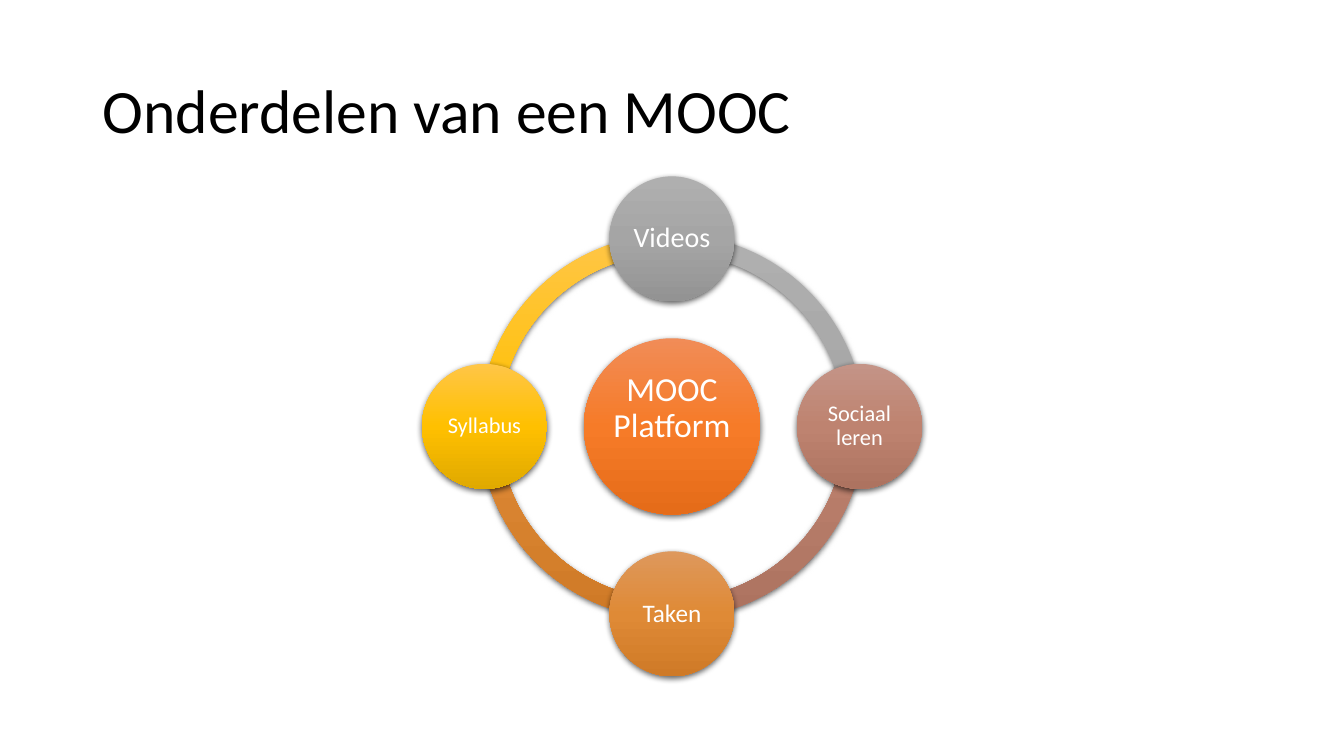
from copy import deepcopy

from lxml import etree
from pptx import Presentation
from pptx.dml.color import RGBColor
from pptx.enum.shapes import MSO_SHAPE
from pptx.enum.text import MSO_ANCHOR, PP_ALIGN
from pptx.oxml.ns import qn
from pptx.util import Inches, Pt

ARC = MSO_SHAPE.BLOCK_ARC
CIRCLE = MSO_SHAPE.OVAL
MIDDLE = MSO_ANCHOR.MIDDLE
CENTER = PP_ALIGN.CENTER
LEFT = PP_ALIGN.LEFT

BLACK = RGBColor(0x00, 0x00, 0x00)
WHITE = RGBColor(0xFF, 0xFF, 0xFF)
GREY = [RGBColor(0xAF, 0xAF, 0xAF), RGBColor(0xA5, 0xA5, 0xA5), RGBColor(0x93, 0x93, 0x93)]
ROSE = [RGBColor(0xC4, 0x94, 0x87), RGBColor(0xBE, 0x83, 0x70), RGBColor(0xAD, 0x73, 0x60)]
AMBER = [RGBColor(0xDE, 0x98, 0x5C), RGBColor(0xDF, 0x8A, 0x36), RGBColor(0xCF, 0x7A, 0x27)]
YELLOW = [RGBColor(0xFF, 0xC6, 0x47), RGBColor(0xFF, 0xC0, 0x00), RGBColor(0xE0, 0xA9, 0x00)]
ORANGE = [RGBColor(0xF1, 0x8C, 0x57), RGBColor(0xF6, 0x7B, 0x28), RGBColor(0xE5, 0x6C, 0x19)]

WIDTH, HEIGHT = Inches(13.33), Inches(7.5)
STEP = Inches(0.62)
CENTER_X, CENTER_Y = WIDTH / 2, Inches(4.23)
RING_SIZE, HUB_SIZE, PART_SIZE, ORBIT = 6.15, 2.82, 2, 3
QUARTER = 54
RING_THICKNESS = 0.05
INSET = Inches(0.02)

PARTS = [
    ("Sociaal leren", 16, ROSE, 1, 0),
    ("Taken", 18, AMBER, 0, 1),
    ("Syllabus", 16, YELLOW, -1, 0),
    ("Videos", 20, GREY, 0, -1),
]


def apply(target, formats):
    for name, value in formats.items():
        setattr(target, name, value)


def add_shadow(shape):
    shape.shadow.inherit = False
    effects = shape._element.spPr.find(qn("a:effectLst"))
    shadow = etree.SubElement(effects, qn("a:outerShdw"), blurRad=str(Pt(4.5)),
                              dist=str(Pt(1.5)), dir="5400000", algn="ctr", rotWithShape="0")
    color = etree.SubElement(shadow, qn("a:srgbClr"), val="000000")
    etree.SubElement(color, qn("a:alpha"), val="63000")


def add_gradient(shape, colors):
    shape.fill.gradient()
    stops = shape._element.spPr.find(".//" + qn("a:gsLst"))
    stops.append(deepcopy(stops[-1]))
    for index, (stop, color) in enumerate(zip(shape.fill.gradient_stops, colors)):
        stop.color.rgb = color
        stop.position = index / 2
    shape.fill.gradient_angle = 270


def add_round(page, kind, size, colors, column=0, row=0):
    side = size * STEP
    left = CENTER_X + column * STEP - side / 2
    top = CENTER_Y + row * STEP - side / 2
    shape = page.shapes.add_shape(kind, int(left), int(top), int(side), int(side))
    add_gradient(shape, colors)
    shape.line.fill.background()
    add_shadow(shape)
    return shape


def add_arc(page, colors, quadrant):
    arc = add_round(page, ARC, RING_SIZE, colors)
    arc.adjustments[0] = quadrant * QUARTER
    arc.adjustments[1] = (quadrant + 1) % 4 * QUARTER
    arc.adjustments[2] = RING_THICKNESS


def write(box, text, size, color, align):
    box.text_frame.text = text
    box.text_frame.vertical_anchor = MIDDLE
    para = box.text_frame.paragraphs[0]
    apply(para, {"alignment": align, "line_spacing": 0.9})
    apply(para.font, {"name": "Calibri", "size": Pt(size)})
    para.font.color.rgb = color


def add_label_circle(page, text, text_size, size, colors, column=0, row=0, lift=0):
    circle = add_round(page, CIRCLE, size, colors, column, row)
    write(circle, text, text_size, WHITE, CENTER)
    apply(circle.text_frame, {
        "word_wrap": True, "margin_left": INSET, "margin_right": INSET,
        "margin_top": INSET, "margin_bottom": INSET + lift,
    })


def add_title(page, text):
    title = page.shapes.title
    apply(title, {"left": Inches(0.92), "top": Inches(0.4),
                  "width": Inches(11.5), "height": Inches(1.45)})
    write(title, text, 44, BLACK, LEFT)


def main():
    deck = Presentation()
    apply(deck, {"slide_width": WIDTH, "slide_height": HEIGHT})
    page = deck.slides.add_slide(deck.slide_layouts[5])
    add_title(page, "Onderdelen van een MOOC")
    for quadrant, (_, _, colors, _, _) in enumerate(PARTS):
        add_arc(page, colors, quadrant)
    add_label_circle(page, "MOOC Platform", 24, HUB_SIZE, ORANGE, lift=Inches(0.36))
    for text, text_size, colors, column, row in PARTS:
        add_label_circle(page, text, text_size, PART_SIZE, colors, column * ORBIT, row * ORBIT)
    deck.save("out.pptx")


if __name__ == "__main__":
    main()
